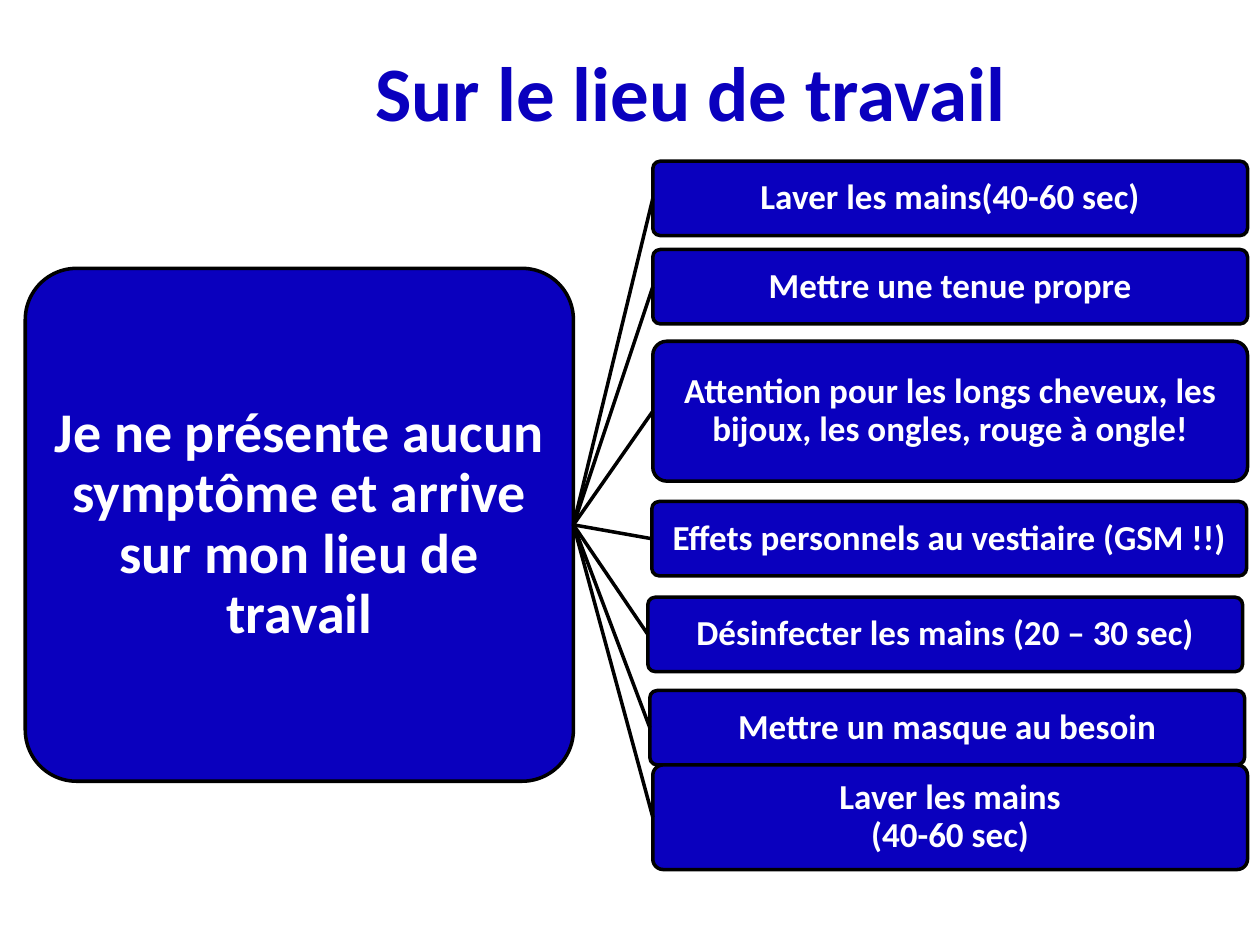
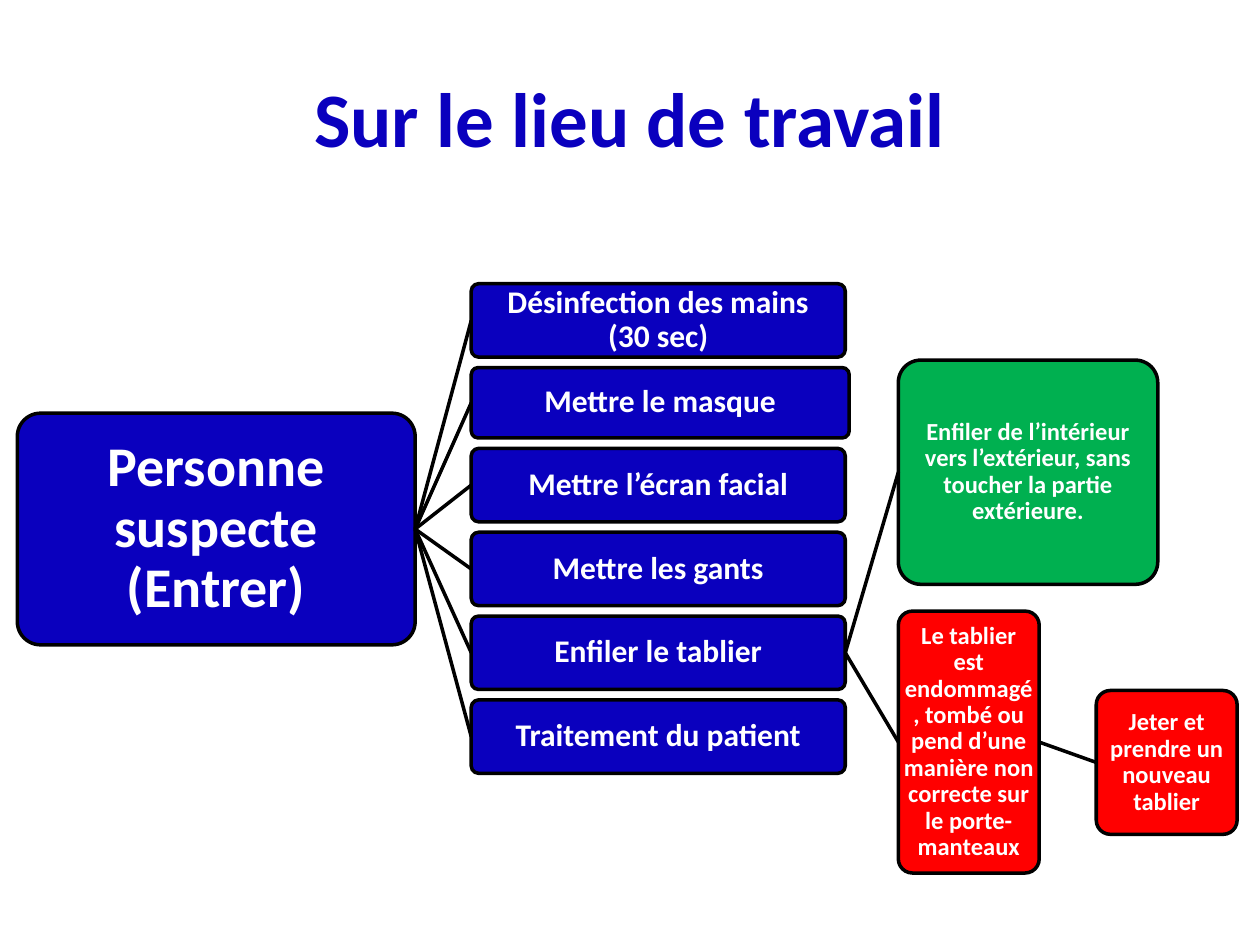
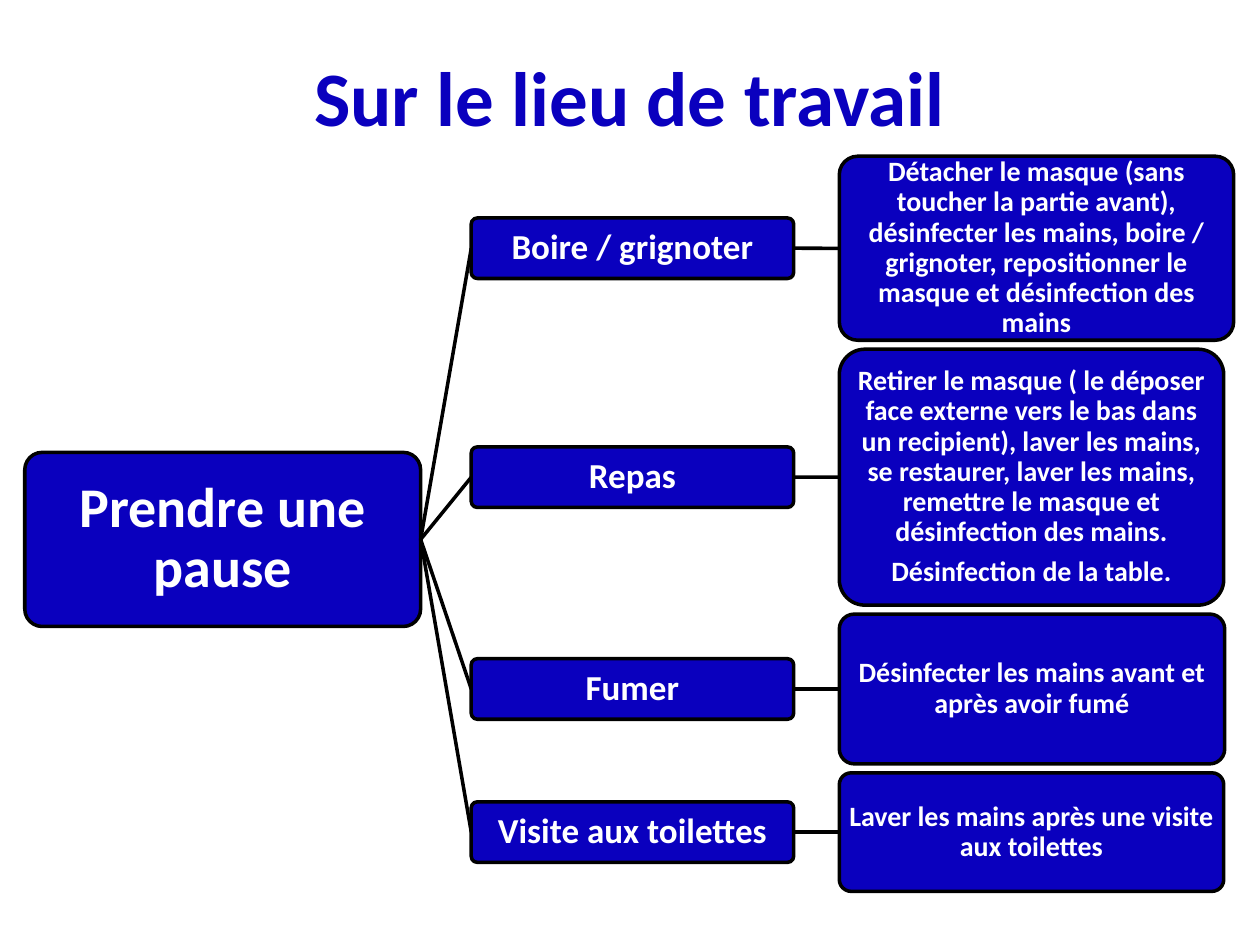
from dataclasses import dataclass

from lxml import etree
from pptx import Presentation
from pptx.dml.color import RGBColor
from pptx.enum.shapes import MSO_CONNECTOR as Connector, MSO_SHAPE as Preset
from pptx.enum.text import MSO_ANCHOR as Anchor, PP_ALIGN as Align
from pptx.oxml.ns import qn
from pptx.shapes.autoshape import Shape
from pptx.slide import Slide
from pptx.text.text import TextFrame
from pptx.util import Cm, Pt

BLUE, GREEN, RED = "0A00BE", "00B050", "FF0000"
BLACK, WHITE = "000000", "FFFFFF"
FONT = "Calibri"
TITLE = "Sur le lieu de travail"
TITLE_SIZE, ROOT_SIZE = 44, 32
LINE_WIDTH = Pt(2)
CORNER = 0.1
INSET_PER_POINT = 0.0016
RIGHT_SIDE, LEFT_SIDE = 3, 1


@dataclass
class Box:
    """Rounded box; lengths in centimetres, text size in points."""
    text: str
    left: float
    top: float
    width: float
    height: float
    size: int
    fill: str = BLUE


def color(value: str) -> RGBColor:
    return RGBColor.from_string(value)


def stack_tops(first: float, heights: list[float], gap: float) -> list[float]:
    """Tops of boxes piled up with equal gaps."""
    return [first + sum(heights[:i]) + i * gap for i in range(len(heights))]


def format_text(frame: TextFrame, size: int, font_color: str) -> None:
    frame.word_wrap = True
    frame.vertical_anchor = Anchor.MIDDLE
    for paragraph in frame.paragraphs:
        paragraph.alignment = Align.CENTER
        for run in paragraph.runs:
            run.font.name = FONT
            run.font.size = Pt(size)
            run.font.bold = True
            run.font.color.rgb = color(font_color)


def add_title(slide: Slide, left: float, top: float, width: float, height: float) -> None:
    shape = slide.shapes.add_textbox(Cm(left), Cm(top), Cm(width), Cm(height))
    shape.text_frame.text = TITLE
    format_text(shape.text_frame, TITLE_SIZE, BLUE)


def draw_box(slide: Slide, box: Box) -> Shape:
    shape = slide.shapes.add_shape(
        Preset.ROUNDED_RECTANGLE, Cm(box.left), Cm(box.top), Cm(box.width), Cm(box.height))
    shape.adjustments[0] = CORNER
    shape.shadow.inherit = False
    shape.fill.solid()
    shape.fill.fore_color.rgb = color(box.fill)
    shape.line.color.rgb = color(BLACK)
    shape.line.width = LINE_WIDTH

    frame = shape.text_frame
    frame.text = box.text
    inset = Cm(box.size * INSET_PER_POINT)
    frame.margin_left = frame.margin_right = inset
    frame.margin_top = frame.margin_bottom = inset
    format_text(frame, box.size, WHITE)
    for paragraph in frame.paragraphs:
        paragraph.line_spacing = 0.9
    for paragraph in frame.paragraphs[1:]:
        paragraph.space_before = Pt(0.35 * box.size)
    return shape


def draw_child(slide: Slide, parent: Shape, box: Box) -> Shape:
    """Draw a box and join its left side to the right side of its parent."""
    shape = draw_box(slide, box)
    connector = slide.shapes.add_connector(Connector.STRAIGHT, 0, 0, 0, 0)
    connector.begin_connect(parent, RIGHT_SIDE)
    connector.end_connect(shape, LEFT_SIDE)
    connector.line.color.rgb = color(BLACK)
    connector.line.width = LINE_WIDTH
    properties = connector._element.spPr
    etree.SubElement(properties, qn("a:effectLst"))
    return shape


def build_arrival(slide: Slide) -> None:
    root = draw_box(slide, Box("Je ne présente aucun symptôme et arrive sur mon lieu de travail",
                               0.51, 5.41, 11.05, 10.34, ROOT_SIZE))
    steps = [
        ("Laver les mains(40-60 sec)", 13.16, 3.25, 1.5),
        ("Mettre une tenue propre", 13.16, 5.03, 1.5),
        ("Attention pour les longs cheveux, les bijoux, les ongles, rouge à ongle!",
         13.16, 6.88, 2.82),
        ("Effets personnels au vestiaire (GSM !!)", 13.14, 10.11, 1.5),
        ("Désinfecter les mains (20 – 30 sec)", 13.06, 12.04, 1.5),
        ("Mettre un masque au besoin", 13.1, 13.92, 1.5),
        ("Laver les mains\v(40-60 sec)", 13.16, 15.42, 2.11),
    ]
    for text, left, top, height in steps:
        draw_child(slide, root, Box(text, left, top, 11.99, height, 20))
    add_title(slide, 3.3, 0.74, 21.26, 2.18)


def build_suspect(slide: Slide) -> None:
    root = draw_box(slide, Box("Personne suspecte (Entrer)", 0.35, 8.33, 8.02, 4.67, ROOT_SIZE))
    apron = "Enfiler le tablier"
    steps = [
        ("Désinfection des mains\v(30 sec)", 7.54, 1.48),
        ("Mettre le masque", 7.62, 1.42),
        ("Mettre l’écran facial", 7.54, 1.48),
        ("Mettre les gants", 7.54, 1.48),
        (apron, 7.54, 1.48),
        ("Traitement du patient", 7.54, 1.48),
    ]
    tops = stack_tops(5.72, [height for _, _, height in steps], 0.21)
    shapes = {
        text: draw_child(slide, root, Box(text, 9.5, top, width, height, 18))
        for (text, width, height), top in zip(steps, tops)
    }
    draw_child(slide, shapes[apron], Box(
        "Enfiler de l’intérieur vers l’extérieur, sans toucher la partie extérieure.",
        18.11, 7.26, 5.23, 4.52, 14, GREEN))
    damaged = draw_child(slide, shapes[apron], Box(
        "Le tablier est endommagé, tombé ou pend d’une manière non correcte "
        "sur le porte-manteaux", 18.11, 12.32, 2.84, 5.28, 14, RED))
    draw_child(slide, damaged, Box(
        "Jeter et prendre un nouveau tablier", 22.1, 13.92, 2.84, 2.9, 14, RED))
    add_title(slide, 1.27, 0.76, 22.86, 3.18)


def build_break(slide: Slide) -> None:
    root = draw_box(slide, Box("Prendre une pause", 0.5, 9.12, 7.98, 3.51, ROOT_SIZE))
    branch_height = 1.22
    branches = [
        ("Boire / grignoter",
         "Détacher le masque (sans toucher la partie avant), désinfecter les mains, "
         "boire / grignoter, repositionner le masque et désinfection des mains", 7.95, 3.71),
        ("Repas",
         "Retirer le masque ( le déposer face externe vers le bas dans un recipient), "
         "laver les mains, se restaurer, laver les mains, remettre le masque et "
         "désinfection des mains.\nDésinfection de la table.", 7.75, 5.16),
        ("Fumer", "Désinfecter les mains avant et après avoir fumé", 7.77, 3.02),
        ("Visite aux toilettes", "Laver les mains après une visite aux toilettes", 7.75, 2.39),
    ]
    tops = stack_tops(3.15, [height for *_, height in branches], 0.18)
    for (activity, detail, width, height), top in zip(branches, tops):
        branch_top = top + (height - branch_height) / 2
        branch = draw_child(slide, root, Box(activity, 9.5, branch_top, 6.5, branch_height, 20))
        draw_child(slide, branch, Box(detail, 16.92, top, width, height, 16))
    add_title(slide, 1.27, 0.33, 22.86, 3.18)


def main() -> None:
    presentation = Presentation()
    presentation.slide_width, presentation.slide_height = Cm(25.4), Cm(19.05)
    blank = presentation.slide_layouts[6]
    for build in (build_arrival, build_suspect, build_break):
        build(presentation.slides.add_slide(blank))
    presentation.save("out.pptx")


if __name__ == "__main__":
    main()
